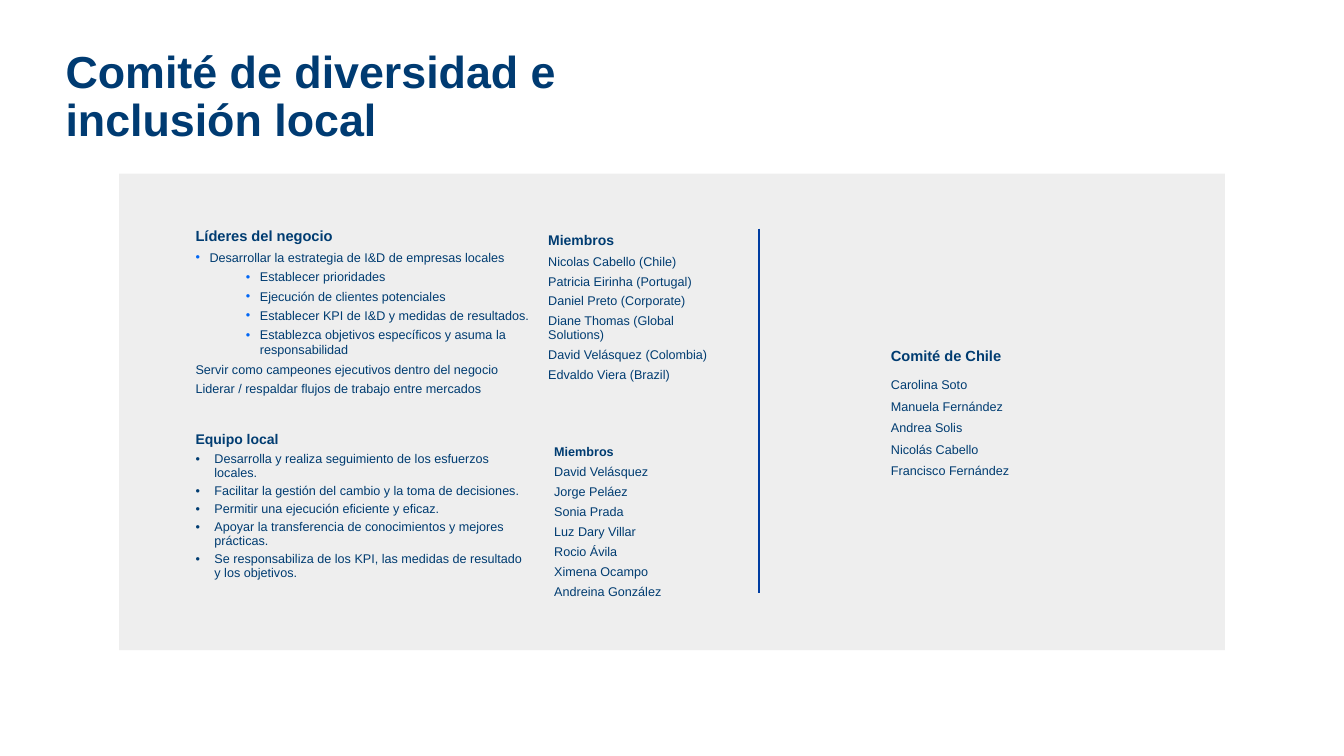
"""Build the slide on the local diversity and inclusion committee."""
from lxml import etree
from pptx import Presentation
from pptx.dml.color import RGBColor
from pptx.enum import shapes, text
from pptx.oxml import ns
from pptx.util import Pt

NAVY = RGBColor(0x00, 0x3C, 0x71)
TITLE_NAVY = RGBColor(0x00, 0x3B, 0x72)
BRIGHT = RGBColor(0x00, 0x66, 0xF5)
RULE = RGBColor(0x00, 0x3D, 0xA1)
GREY = RGBColor(0xEE, 0xEE, 0xEE)
FONT = "Arial"
BODY_SIZE = 9

TITLE = "Comité de diversidad e inclusión local"
TITLE_BOX = (43.2, 31.7, 468, 77)
PANEL_BOX = (85, 124, 790, 340.5)
DIVIDER = (542.2, 163.4, 542.2, 423.4)

PLAIN = (0, 0, None)
TASK = (10, 10, BRIGHT)
SUBTASK = (46, 10, BRIGHT)
TEAM_TASK = (13.5, 13.5, NAVY)

LEADERS = [
    ("Desarrollar la estrategia de I&D de empresas locales", TASK),
    ("Establecer prioridades", SUBTASK),
    ("Ejecución de clientes potenciales", SUBTASK),
    ("Establecer KPI de I&D y medidas de resultados.", SUBTASK),
    ("Establezca objetivos específicos y asuma la responsabilidad", SUBTASK),
    ("Servir como campeones ejecutivos dentro del negocio", PLAIN),
    ("Liderar / respaldar flujos de trabajo entre mercados", PLAIN),
]
TEAM = [
    "Desarrolla y realiza seguimiento de los esfuerzos locales.",
    "Facilitar la gestión del cambio y la toma de decisiones.",
    "Permitir una ejecución eficiente y eficaz.",
    "Apoyar la transferencia de conocimientos y mejores prácticas.",
    "Se responsabiliza de los KPI, las medidas de resultado y los objetivos.",
]
LEADER_MEMBERS = [
    "Nicolas Cabello (Chile)", "Patricia Eirinha (Portugal)",
    "Daniel Preto (Corporate)", "Diane Thomas (Global Solutions)",
    "David Velásquez (Colombia)", "Edvaldo Viera (Brazil)",
]
TEAM_MEMBERS = [
    "David Velásquez", "Jorge Peláez", "Sonia Prada", "Luz Dary Villar",
    "Rocio Ávila", "Ximena Ocampo", "Andreina González",
]
CHILE_MEMBERS = [
    "Carolina Soto", "Manuela Fernández", "Andrea Solis",
    "Nicolás Cabello", "Francisco Fernández",
]


def plain(names):
    return [(name, PLAIN) for name in names]


LISTS = [
    dict(box=(132.5, 132.5, 262.8, 181.4), head="Líderes del negocio", size=10.5,
         items=LEADERS, head_gap=3.7, gap=3, spacing=1.0),
    dict(box=(132.5, 293, 252, 137.5), head="Equipo local", size=10,
         items=[(task, TEAM_TASK) for task in TEAM], head_gap=3.5, gap=3.2, spacing=0.9),
]
MEMBER_BOXES = [
    dict(box=(384.5, 163.4, 132.5, 116), head="Miembros", size=10,
         items=plain(LEADER_MEMBERS), head_gap=4.5, gap=4.5, spacing=0.9),
    dict(box=(388.8, 314.6, 132.5, 121), head="Miembros", size=9,
         items=plain(TEAM_MEMBERS), head_gap=4.5, gap=4.5, spacing=0.9),
    dict(box=(629.3, 244, 110, 20), head="Comité de Chile", size=10.5,
         items=[], head_gap=3, gap=3, spacing=1.0),
    dict(box=(629.3, 266, 157.7, 85), head=None, size=9,
         items=plain(CHILE_MEMBERS), head_gap=4.5, gap=4.5, spacing=1.0),
]


def place(sp, box):
    sp.left, sp.top, sp.width, sp.height = map(Pt, box)


def set_bullet(p, style):
    margin, hang, color = style
    pPr = p._p.get_or_add_pPr()
    pPr.set("marL", str(Pt(margin)))
    pPr.set("indent", str(-Pt(hang)))
    if color is None:
        etree.SubElement(pPr, ns.qn("a:buNone"))
        return
    clr = etree.SubElement(pPr, ns.qn("a:buClr"))
    etree.SubElement(clr, ns.qn("a:srgbClr"), val=str(color))
    etree.SubElement(pPr, ns.qn("a:buFont"), typeface=FONT)
    etree.SubElement(pPr, ns.qn("a:buChar"), char="•")


def add_run(p, words, size, color, bold):
    r = p.add_run()
    r.text = words
    r.font.name, r.font.size, r.font.bold = FONT, Pt(size), bold
    r.font.color.rgb = color


def fill_text(sp, block, anchor):
    place(sp, block["box"])
    tf = sp.text_frame
    tf.word_wrap = True
    tf.auto_size = text.MSO_AUTO_SIZE.NONE
    tf.vertical_anchor = anchor
    rows = [(words, style, BODY_SIZE, block["gap"], block["spacing"], False)
            for words, style in block["items"]]
    if block["head"]:
        spacing = 0.9 if rows else block["spacing"]
        rows.insert(0, (block["head"], PLAIN, block["size"], block["head_gap"], spacing, True))
    for i, (words, style, size, gap, spacing, bold) in enumerate(rows):
        p = tf.add_paragraph() if i else tf.paragraphs[0]
        p.alignment = text.PP_ALIGN.LEFT
        p.line_spacing = spacing
        p.space_before, p.space_after = Pt(0), Pt(gap)
        set_bullet(p, style)
        if style is SUBTASK:
            p.level = 1
        add_run(p, words, size, NAVY, bold)


def main():
    prs = Presentation()
    prs.slide_width, prs.slide_height = Pt(960), Pt(540)
    s = prs.slides.add_slide(prs.slide_layouts[3])

    panel = s.shapes.add_shape(shapes.MSO_SHAPE.RECTANGLE, *map(Pt, PANEL_BOX))
    panel.shadow.inherit = False
    panel.fill.solid()
    panel.fill.fore_color.rgb = GREY
    panel.line.fill.background()
    s.shapes._spTree.insert(2, panel._element)

    title = s.shapes.title
    place(title, TITLE_BOX)
    tf = title.text_frame
    tf.word_wrap = True
    tf.auto_size = text.MSO_AUTO_SIZE.NONE
    tf.vertical_anchor = text.MSO_ANCHOR.MIDDLE
    tf.margin_left = tf.margin_right = tf.margin_top = tf.margin_bottom = Pt(3.6)
    p = tf.paragraphs[0]
    p.alignment = text.PP_ALIGN.LEFT
    p.line_spacing = 0.9
    add_run(p, TITLE, 32, TITLE_NAVY, True)

    for idx, block in enumerate(LISTS, start=1):
        fill_text(s.placeholders[idx], block, text.MSO_ANCHOR.MIDDLE)
    for block in MEMBER_BOXES:
        sp = s.shapes.add_textbox(*map(Pt, block["box"]))
        fill_text(sp, block, text.MSO_ANCHOR.TOP)

    line = s.shapes.add_connector(shapes.MSO_CONNECTOR.STRAIGHT, *map(Pt, DIVIDER))
    line.line.color.rgb = RULE
    line.line.width = Pt(1.5)
    etree.SubElement(line._element.spPr, ns.qn("a:effectLst"))

    prs.save("out.pptx")


if __name__ == "__main__":
    main()
